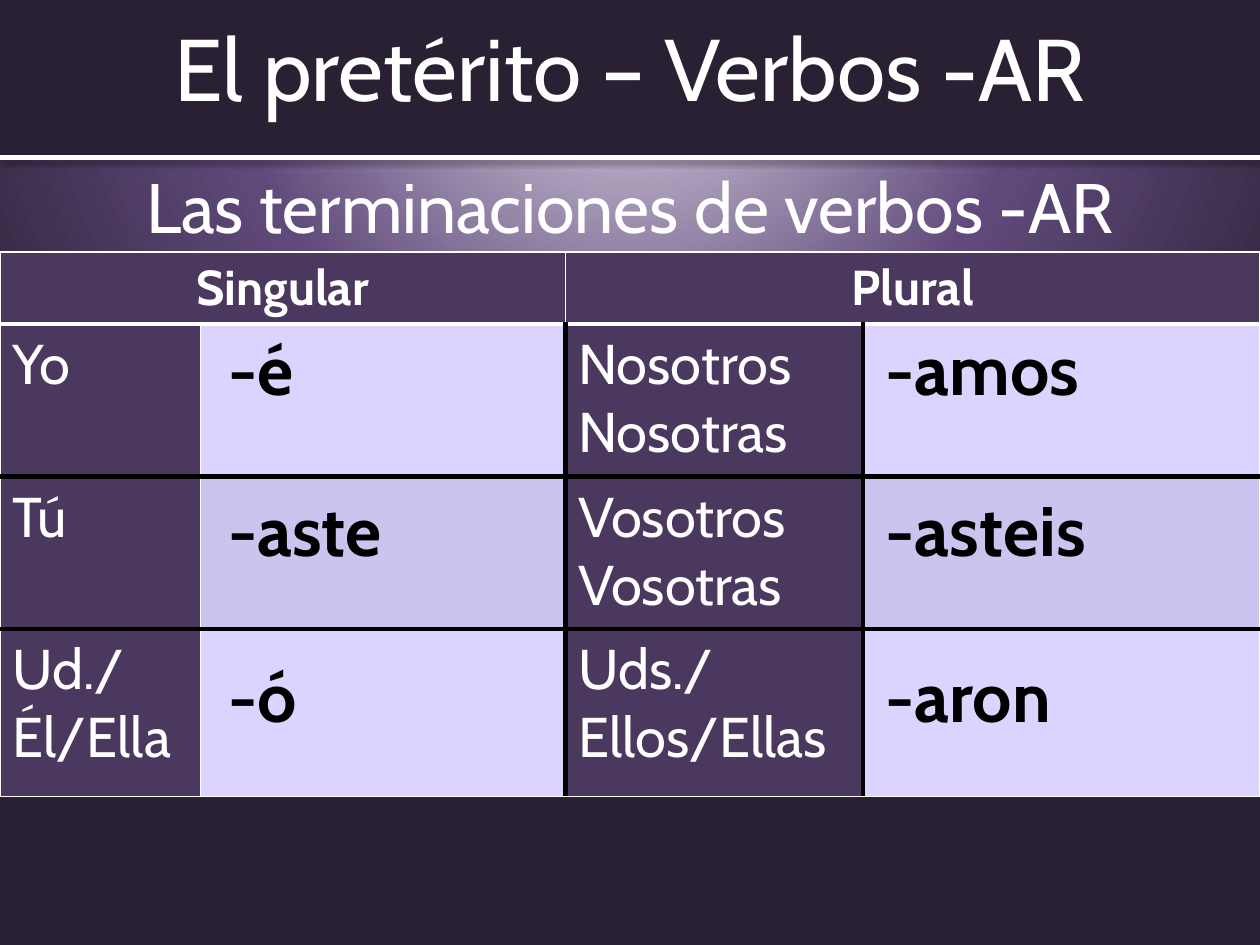
"""Build a slide with the Spanish preterite endings of -AR verbs."""
from lxml import etree
from pptx import Presentation
from pptx import util as u
from pptx.dml.color import RGBColor
from pptx.enum import shapes, text
from pptx.oxml import parse_xml
from pptx.oxml.ns import nsdecls, qn

WHITE = RGBColor(0xFF, 0xFF, 0xFF)
BLACK = RGBColor(0, 0, 0)
NIGHT = RGBColor(0x29, 0x20, 0x34)
PURPLE = RGBColor(0x4A, 0x38, 0x5F)
LILAC = RGBColor(0xDC, 0xD3, 0xFF)
LAVENDER = RGBColor(0xCB, 0xC4, 0xEE)
GLOW = [(0, "E6E0EC"), (52, "604A7B"), (100, "292034")]


def write(frame, words, size, color=WHITE, bold=False, align=text.PP_ALIGN.LEFT):
    frame.word_wrap = True
    frame.text = words
    for paragraph in frame.paragraphs:
        paragraph.alignment = align
        font = paragraph.runs[0].font
        font.name, font.size, font.bold = "Cabin", u.Pt(size), bold
        font.color.rgb = color


def border(cell, left=None, right=None, top=None, bottom=None):
    properties = cell._tc.get_or_add_tcPr()
    sides = zip("LRTB", (left, right, top, bottom))
    for place, (side, line) in enumerate(sides):
        color, width = line or (None, 0)
        paint = f'<a:solidFill><a:srgbClr val="{color}"/></a:solidFill>' if line else "<a:noFill/>"
        properties.insert(place, parse_xml(
            f'<a:ln{side} {nsdecls("a")} w="{u.Pt(width)}">{paint}</a:ln{side}>'))


deck = Presentation()
deck.slide_width, deck.slide_height = u.Inches(10), u.Inches(7.5)
W, H = deck.slide_width, deck.slide_height
slide = deck.slides.add_slide(deck.slide_layouts[5])
banner_height = H // 6

slide.background.fill.gradient()
glow = slide.background._cSld.find(".//" + qn("a:gradFill"))
for part in list(glow):
    glow.remove(part)
stops = etree.SubElement(glow, qn("a:gsLst"))
for position, color in GLOW:
    stop = etree.SubElement(stops, qn("a:gs"), pos=str(position * 1000))
    etree.SubElement(stop, qn("a:srgbClr"), val=color)
spread = etree.SubElement(glow, qn("a:path"))
spread.set("path", "circle")
etree.SubElement(spread, qn("a:fillToRect"), l="50000", t="-80000", r="50000", b="180000")

banner = slide.shapes.add_shape(shapes.MSO_SHAPE.RECTANGLE, 0, 0, W, banner_height)
banner.shadow.inherit = False
banner.fill.solid()
banner.fill.fore_color.rgb = NIGHT
banner.line.fill.background()

subtitle = slide.shapes.add_textbox(0, banner_height, W, H // 10)
write(subtitle.text_frame, "Las terminaciones de verbos -AR", 40, align=text.PP_ALIGN.CENTER)

rule = slide.shapes.add_connector(
    shapes.MSO_CONNECTOR.STRAIGHT, 0, banner_height, W, banner_height)
rule.line.color.rgb, rule.line.width = WHITE, u.Pt(3)
effects = etree.SubElement(rule._element.spPr, qn("a:effectLst"))
shade = etree.SubElement(effects, qn("a:outerShdw"), blurRad=str(u.Pt(3.1)),
                         dist=str(u.Pt(1.6)), dir="5400000", rotWithShape="0")
tint = etree.SubElement(shade, qn("a:srgbClr"), val="000000")
etree.SubElement(tint, qn("a:alpha"), val="38000")

title = slide.shapes.title
title.left, title.top, title.width, title.height = 0, 0, W, u.Inches(1.06)
write(title.text_frame, "El pretérito – Verbos -AR", 50, align=text.PP_ALIGN.CENTER)
title.text_frame.vertical_anchor = text.MSO_ANCHOR.MIDDLE
slide.shapes._spTree.append(title._element)

column_widths = [1.59, 2.9, 2.36, 3.15]
row_heights = [0.57, 1.21, 1.21, 1.33]
pronouns = [("Yo", "Nosotros\nNosotras"), ("Tú", "Vosotros\nVosotras"),
            ("Ud./Él/Ella", "Uds./Ellos/Ellas")]
thin, thick, black = (WHITE, 1), (WHITE, 3), (BLACK, 3)
across = [thin, thick, black, black, thin]
down = [thin, thin, black, black, thin]

grid = slide.shapes.add_table(4, 4, 0, u.Inches(2), W, u.Inches(sum(row_heights))).table
for column, width in zip(grid.columns, column_widths):
    column.width = u.Inches(width)
for r, height in enumerate(row_heights):
    grid.rows[r].height = u.Inches(height)
    for c in range(4):
        cell = grid.cell(r, c)
        sides = down if r else [thin] * 5
        border(cell, sides[c], sides[c + 1], across[r], across[r + 1])
        cell.fill.solid()
        ending_fill = LAVENDER if r == 2 else LILAC
        cell.fill.fore_color.rgb = ending_fill if r and c % 2 else PURPLE
        if r and c % 2 == 0:
            write(cell.text_frame, pronouns[r - 1][c // 2], 32)
for c, number in ((0, "Singular"), (2, "Plural")):
    grid.cell(0, c).merge(grid.cell(0, c + 1))
    write(grid.cell(0, c).text_frame, number, 28, bold=True, align=text.PP_ALIGN.CENTER)

ending_tops = [2.55, 3.83, 5.15]
endings = [(1.71, [("-é", 2.46), ("-aste", 2.34), ("-ó", 2.46)]),
           (6.93, [("-amos", 2.82), ("-asteis", 2.52), ("-aron", 2.4)])]
for left, column in endings:
    for top, (ending, width) in zip(ending_tops, column):
        holder = slide.shapes.add_table(
            1, 1, u.Inches(left), u.Inches(top), u.Inches(width), u.Inches(0.77)).table
        cell = holder.cell(0, 0)
        border(cell)
        cell.fill.background()
        write(cell.text_frame, ending, 40, color=BLACK, bold=True)

deck.save("out.pptx")
